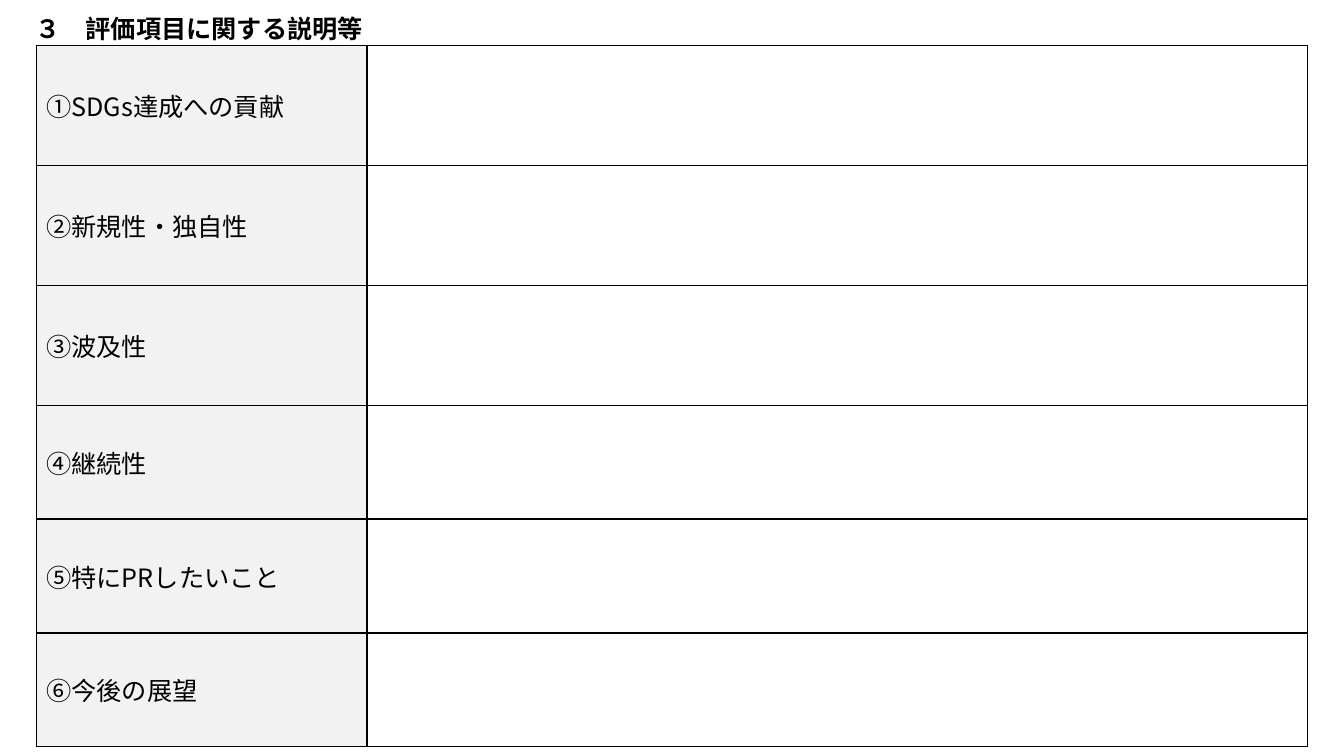
from lxml.etree import SubElement
from pptx import Presentation
from pptx.dml.color import RGBColor
from pptx.enum.text import MSO_ANCHOR as Anchor, MSO_AUTO_SIZE as AutoSize, PP_ALIGN as Align
from pptx.oxml import parse_xml
from pptx.oxml.ns import nsdecls, qn
from pptx.util import Inches, Pt

BLACK = RGBColor(0x00, 0x00, 0x00)
WHITE = RGBColor(0xFF, 0xFF, 0xFF)
LABEL_GREY = RGBColor(0xF2, 0xF2, 0xF2)

CRITERIA = [
    "①SDGs達成への貢献",
    "②新規性・独自性",
    "③波及性",
    "④継続性",
    "⑤特にPRしたいこと",
    "⑥今後の展望",
]
HANGING_ROWS = 4
ROW_HEIGHTS = [1.19] * 3 + [1.13] * 3
COLUMN_WIDTHS = [3.28, 9.33]


class Sheet:
    font_name = "Noto Sans CJK JP"
    font_size = Pt(18)
    border_width = Pt(1)
    hang = Inches(0.2)

    def __init__(self, deck):
        self.slide = deck.slides.add_slide(deck.slide_layouts[5])

    def style(self, paragraph, bold=False):
        paragraph.alignment = Align.LEFT
        paragraph.line_spacing = 1.0
        for run in paragraph.runs:
            run.font.size = self.font_size
            run.font.bold = bold
            run.font.color.rgb = BLACK
            run.font.name = self.font_name
            SubElement(run.font._element, qn("a:ea"), typeface=self.font_name)

    def heading(self, text, left, top, width, height):
        title = self.slide.shapes.title
        title.left, title.top = Inches(left), Inches(top)
        title.width, title.height = Inches(width), Inches(height)
        frame = title.text_frame
        frame.text = text
        frame.word_wrap = True
        frame.auto_size = AutoSize.NONE
        frame.vertical_anchor = Anchor.MIDDLE
        self.style(frame.paragraphs[0], bold=True)

    def border(self, cell):
        properties = cell._tc.get_or_add_tcPr()
        for position, side in enumerate(("lnL", "lnR", "lnT", "lnB")):
            properties.insert(position, parse_xml(
                f'<a:{side} {nsdecls("a")} w="{self.border_width}"><a:solidFill>'
                f'<a:srgbClr val="{BLACK}"/></a:solidFill></a:{side}>'))

    def cell(self, cell, fill, text="", hanging=False):
        cell.fill.solid()
        cell.fill.fore_color.rgb = fill
        cell.vertical_anchor = Anchor.MIDDLE
        self.border(cell)
        if text:
            cell.text_frame.text = text
            label = cell.text_frame.paragraphs[0]
            self.style(label)
            if hanging:
                indents = label._p.get_or_add_pPr()
                indents.set("marL", str(self.hang))
                indents.set("indent", str(-self.hang))

    def form(self, labels, left, top, widths, heights):
        table = self.slide.shapes.add_table(
            len(heights), len(widths), Inches(left), Inches(top),
            Inches(sum(widths)), Inches(sum(heights))).table
        for column, width in zip(table.columns, widths):
            column.width = Inches(width)
        for index, (label, height) in enumerate(zip(labels, heights)):
            table.rows[index].height = Inches(height)
            self.cell(table.cell(index, 0), LABEL_GREY, label, index < HANGING_ROWS)
            self.cell(table.cell(index, 1), WHITE)


def main():
    deck = Presentation()
    deck.slide_width, deck.slide_height = Inches(13.33), Inches(7.5)
    sheet = Sheet(deck)
    # Section heading
    sheet.heading("３　評価項目に関する説明等", 0.25, 0.08, 4.32, 0.41)
    # Entry form: one row per criterion, with an empty answer cell
    sheet.form(CRITERIA, 0.36, 0.45, COLUMN_WIDTHS, ROW_HEIGHTS)
    deck.save("out.pptx")


if __name__ == "__main__":
    main()
